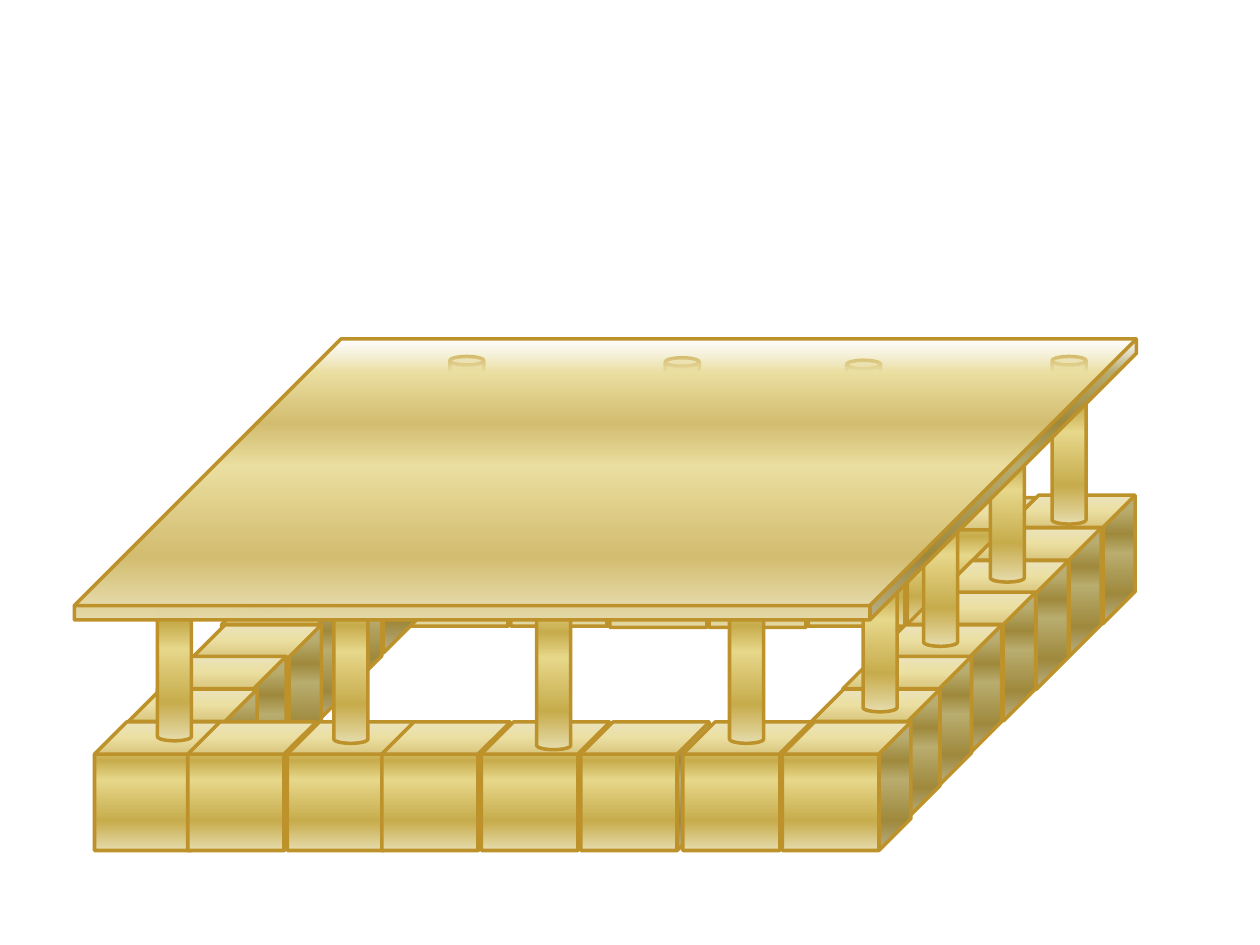
from lxml.etree import SubElement
from pptx import Presentation
from pptx.dml.color import RGBColor
from pptx.enum.shapes import MSO_SHAPE
from pptx.oxml.ns import qn
from pptx.util import Inches, Pt

COLORS = {"pale": "E6DCAC", "light": "E6D78A", "dark": "C7AC4C", "outline": "BD922A"}
GOLD_STOPS = [(0, "pale"), (12, "light"), (30, "dark"),
              (45, "light"), (77, "dark"), (100, "pale")]

BLOCK_SIZE = 1.02
BACK_LEFT, BACK_STEP = 2.48, 0.787
BACK_TOPS = [3.95, 3.95, 3.95, 3.96, 3.96, 3.95, 3.95, 3.93]
LEFT_SIDE = [(2.28, 4.16), (2.01, 4.44), (1.76, 4.7),
             (1.53, 4.96), (1.25, 5.21), (1.02, 5.47)]
RIGHT_SIDE = [(7.72, 4.19), (7.46, 4.45), (7.2, 4.7),
              (6.93, 4.96), (6.69, 5.21), (6.44, 5.47)]
FRONT_TOP = 5.73
FRONT_LEFTS = [0.75, 1.49, 2.28, 3.03, 3.82, 4.61, 5.42, 6.21]

PILLAR_WIDTH, PILLAR_HEIGHT = 0.27, 1.33
PILLARS = [
    (1.25, 4.55), (2, 3.52),
    (3.57, 2.83), (5.28, 2.84), (6.72, 2.86), (8.35, 2.83),
    (7.86, 3.29), (7.33, 3.8), (6.85, 4.32),
    (5.79, 4.57), (4.26, 4.62), (2.65, 4.57),
]
ROOF = (0.59, 2.69, 8.43, 2.23)
ROOF_DEPTH = 0.949


def fill_gold(shape, clear_start):
    """Fill from top to bottom; clear_start makes the first stop transparent."""
    shape.fill.gradient()
    shape.fill.gradient_angle = 270
    stop_list = next(shape.element.iter(qn("a:gsLst")))
    for stop in list(stop_list):
        stop_list.remove(stop)
    for percent, name in GOLD_STOPS:
        stop = SubElement(stop_list, qn("a:gs"), pos=str(percent * 1000))
        color = SubElement(stop, qn("a:srgbClr"), val=COLORS[name])
        if clear_start and percent == 0:
            SubElement(color, qn("a:alpha"), val="0")


def add_gold_shape(slide, kind, left, top, width, height, clear_start=False):
    shape = slide.shapes.add_shape(
        kind, Inches(left), Inches(top), Inches(width), Inches(height))
    shape.shadow.inherit = False
    fill_gold(shape, clear_start)
    shape.line.color.rgb = RGBColor.from_string(COLORS["outline"])
    shape.line.width = Pt(2)
    return shape


def main():
    presentation = Presentation()
    presentation.slide_width, presentation.slide_height = Inches(10), Inches(7.5)
    slide = presentation.slides.add_slide(presentation.slide_layouts[6])

    back_row = [(BACK_LEFT + index * BACK_STEP, top)
                for index, top in enumerate(BACK_TOPS)]
    front_row = [(left, FRONT_TOP) for left in FRONT_LEFTS]
    for left, top in back_row + LEFT_SIDE + RIGHT_SIDE + front_row:
        add_gold_shape(slide, MSO_SHAPE.CUBE, left, top, BLOCK_SIZE, BLOCK_SIZE)
    for left, top in PILLARS:
        add_gold_shape(slide, MSO_SHAPE.CAN, left, top, PILLAR_WIDTH, PILLAR_HEIGHT)
    roof = add_gold_shape(slide, MSO_SHAPE.CUBE, *ROOF, clear_start=True)
    roof.adjustments[0] = ROOF_DEPTH

    presentation.save("out.pptx")


if __name__ == "__main__":
    main()
